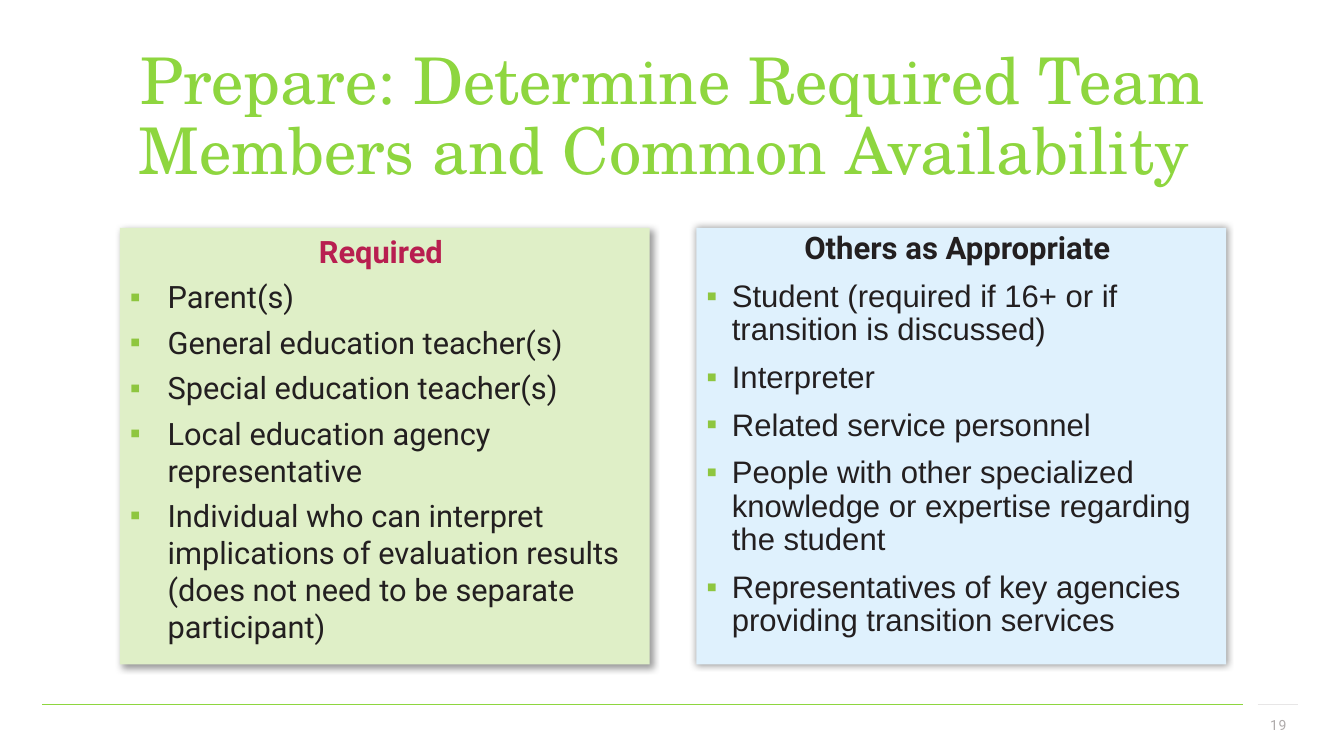
from lxml import etree
from pptx import Presentation
from pptx.dml.color import RGBColor
from pptx.enum.shapes import MSO_CONNECTOR
from pptx.enum.text import MSO_ANCHOR, MSO_AUTO_SIZE, PP_ALIGN
from pptx.oxml.ns import qn
from pptx.util import Cm, Pt

STRAIGHT = MSO_CONNECTOR.STRAIGHT
TOP, MIDDLE = MSO_ANCHOR.TOP, MSO_ANCHOR.MIDDLE
LEFT, CENTER, RIGHT = PP_ALIGN.LEFT, PP_ALIGN.CENTER, PP_ALIGN.RIGHT
NO_AUTOFIT = MSO_AUTO_SIZE.NONE
TWO_CONTENT_LAYOUT = 3

COLORS = {
    "title": "8ED63F", "rule": "8ED63F", "short_rule": "E7E6E6",
    "bullet": "8EC63F", "text": "231F20", "required": "B81E50",
    "green_panel": "DFEFC7", "blue_panel": "DFF1FD",
    "number": "AFABAB", "shadow": "000000",
}


def add_xml(parent, tag, **attributes):
    return etree.SubElement(parent, qn(tag), attributes)


class TeamSlide:
    def __init__(self, presentation):
        self.slide = presentation.slides.add_slide(
            presentation.slide_layouts[TWO_CONTENT_LAYOUT])

    def color(self, name):
        return RGBColor.from_string(COLORS[name])

    def place(self, shape, left, top, width, height):
        shape.left, shape.top = Cm(left), Cm(top)
        shape.width, shape.height = Cm(width), Cm(height)

    def style(self, paragraph, font, size, color, align=LEFT, bold=False):
        paragraph.alignment = align
        paragraph.font.name = font
        paragraph.font.size = Pt(size)
        paragraph.font.bold = bold
        paragraph.font.color.rgb = self.color(color)

    def rule(self, start, end, color):
        line = self.slide.shapes.add_connector(
            STRAIGHT, Cm(start), Cm(17.75), Cm(end), Cm(17.75))
        line.line.color.rgb = self.color(color)
        line.line.width = Pt(1)
        add_xml(line._element.spPr, "a:effectLst")

    def title(self, text):
        shape = self.slide.shapes.title
        self.place(shape, 1.07, 1.27, 31.75, 3.43)
        frame = shape.text_frame
        frame.text = text
        frame.auto_size = NO_AUTOFIT
        frame.vertical_anchor = MIDDLE
        paragraph = frame.paragraphs[0]
        paragraph.line_spacing = 0.9
        self.style(paragraph, "TeX Gyre Schola", 46, "title", CENTER)

    def indent(self, paragraph, indent, bullet):
        """Set the hanging indent in Cm, with a square bullet or none."""
        properties = paragraph._p.get_or_add_pPr()
        properties.set("marL", str(Cm(indent)))
        properties.set("indent", str(-Cm(indent)))
        if not bullet:
            add_xml(properties, "a:buNone")
            return
        bullet_color = add_xml(properties, "a:buClr")
        add_xml(bullet_color, "a:srgbClr", val=COLORS["bullet"])
        add_xml(properties, "a:buFont", typeface="Arial")
        add_xml(properties, "a:buChar", char="▪")

    def shadow(self, shape, distance):
        effects = add_xml(shape._element.spPr, "a:effectLst")
        outer = add_xml(effects, "a:outerShdw", blurRad=str(Pt(5)),
                        dist=str(Pt(distance)), dir="2700000", algn="tl", rotWithShape="0")
        shade = add_xml(outer, "a:srgbClr", val=COLORS["shadow"])
        add_xml(shade, "a:alpha", val="40000")

    def panel(self, index, left, fill, heading, heading_color, items, *,
              font, size, indent, space, line_spacing, shadow_distance):
        shape = self.slide.placeholders[index]
        self.place(shape, left, 5.74, 13.35, 11)
        shape.fill.solid()
        shape.fill.fore_color.rgb = self.color(fill)
        self.shadow(shape, shadow_distance)
        frame = shape.text_frame
        frame.text = "\n".join([heading, *items])
        frame.auto_size = NO_AUTOFIT
        frame.vertical_anchor = TOP
        for position, paragraph in enumerate(frame.paragraphs):
            is_item = position > 0
            paragraph.space_before = Pt(space)
            paragraph.line_spacing = line_spacing
            if is_item:
                self.style(paragraph, font, size, "text")
            else:
                self.style(paragraph, "Roboto", size, heading_color, CENTER, True)
            self.indent(paragraph, indent if is_item else 0, is_item)

    def number(self, text):
        shape = self.slide.shapes.add_textbox(Cm(31.6), Cm(17.75), Cm(1.07), Cm(1.02))
        frame = shape.text_frame
        frame.word_wrap = True
        frame.vertical_anchor = MIDDLE
        frame.text = text
        self.style(frame.paragraphs[0], "Roboto", 10, "number", RIGHT)
        frame.paragraphs[0].runs[0]._r.get_or_add_rPr().set("spc", "50")


def main():
    presentation = Presentation()
    presentation.slide_width, presentation.slide_height = Cm(33.87), Cm(19.05)
    team = TeamSlide(presentation)
    team.rule(1.07, 31.32, "rule")
    team.rule(31.7, 32.72, "short_rule")
    team.title("Prepare: Determine Required Team Members and Common Availability ")
    team.panel(
        1, 3.02, "green_panel", "Required ", "required",
        ["Parent(s)",
         "General education teacher(s)",
         "Special education teacher(s)",
         "Local education agency representative",
         "Individual who can interpret implications of evaluation results "
         "(does not need to be separate participant)"],
        font="Roboto", size=22, indent=0.95, space=6, line_spacing=1.0, shadow_distance=3)
    team.panel(
        2, 17.55, "blue_panel", "Others as Appropriate ", "text",
        ["Student (required if 16+ or if transition is discussed)",
         "Interpreter",
         "Related service personnel",
         "People with other specialized knowledge or expertise regarding the student",
         "Representatives of key agencies providing transition services"],
        font="Arial", size=22.2, indent=0.64, space=10, line_spacing=0.9, shadow_distance=0)
    team.number("19")
    presentation.save("out.pptx")


if __name__ == "__main__":
    main()
